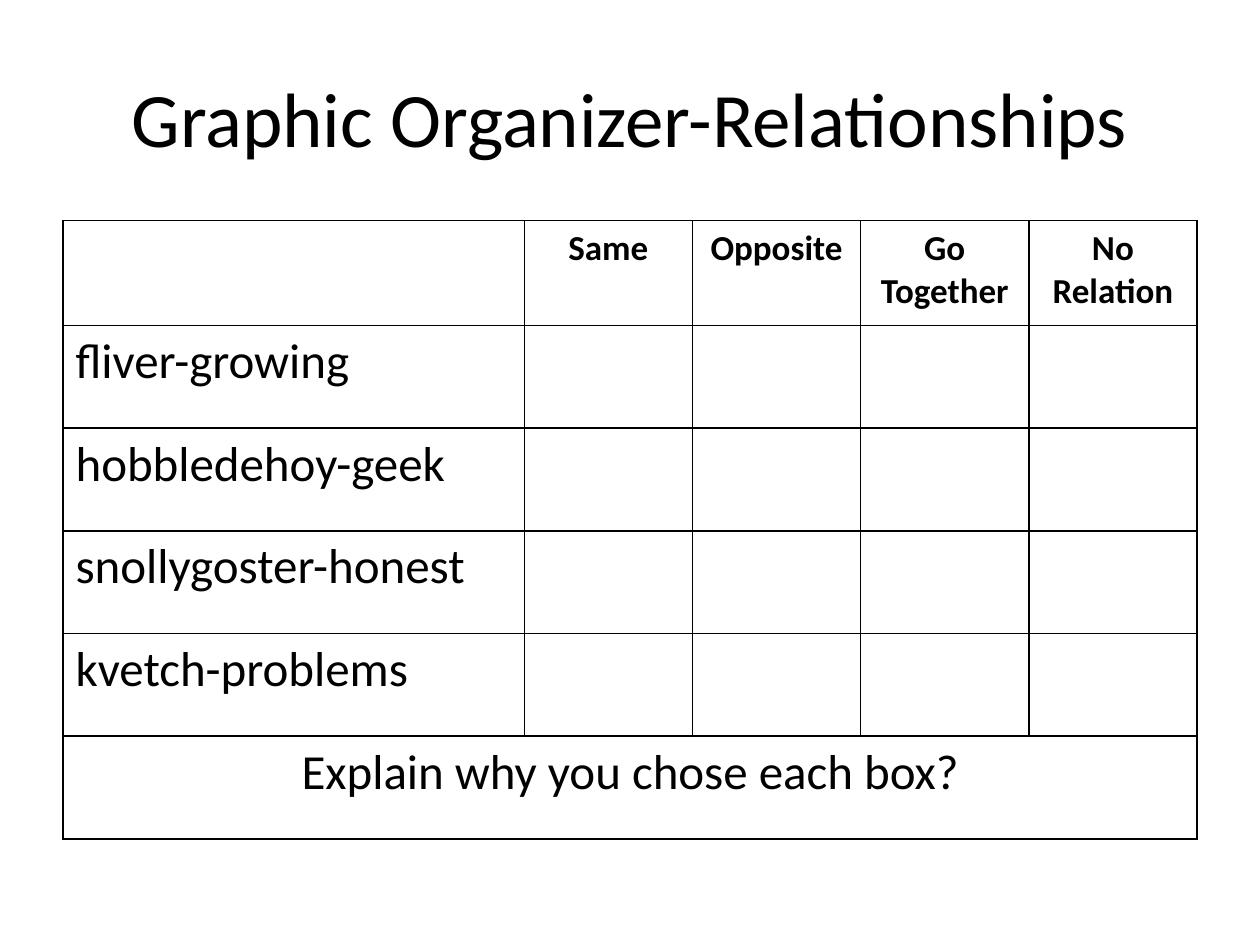
from lxml.etree import SubElement
from pptx import Presentation
from pptx.dml.color import RGBColor
from pptx.enum.text import MSO_ANCHOR, PP_ALIGN
from pptx.oxml.ns import qn
from pptx.util import Cm, Pt

COLORS = {"ink": "000000", "paper": "FFFFFF"}
TITLE = {"size": Pt(44), "bold": False, "name": "Calibri"}
HEAD = {"size": Pt(20), "bold": True, "name": "Calibri"}
BODY = {"size": Pt(28), "bold": False, "name": "Calibri"}

HEADS = ["Same", "Opposite", "Go Together", "No Relation"]
PAIRS = ["fliver-growing", "hobbledehoy-geek", "snollygoster-honest", "kvetch-problems"]
PROMPT = "Explain why you chose each box?"

LEFT, WIDTH = Cm(1.27), Cm(22.86)
COLS = [Cm(9.3)] + [Cm(3.39)] * len(HEADS)
ROWS = [Cm(2.11)] + [Cm(2.07)] * (len(PAIRS) + 1)


def write(frame, text, style, align=PP_ALIGN.CENTER):
    para = frame.paragraphs[0]
    para.alignment = align
    run = para.add_run()
    run.text = text
    for key, value in style.items():
        setattr(run.font, key, value)
    run.font.color.rgb = RGBColor.from_string(COLORS["ink"])


def add_title(slide, text):
    frame = slide.shapes.add_textbox(LEFT, Cm(0.76), WIDTH, Cm(3.18)).text_frame
    for key, value in {"word_wrap": True, "vertical_anchor": MSO_ANCHOR.MIDDLE}.items():
        setattr(frame, key, value)
    write(frame, text, TITLE)


def dress(cell):
    """Give a cell thin borders on all sides and a plain fill."""
    props = cell._tc.get_or_add_tcPr()
    for side in ("lnL", "lnR", "lnT", "lnB"):
        line = SubElement(props, qn(f"a:{side}"), w=str(Pt(1)))
        fill = SubElement(line, qn("a:solidFill"))
        SubElement(fill, qn("a:srgbClr"), val=COLORS["ink"])
    cell.fill.solid()
    cell.fill.fore_color.rgb = RGBColor.from_string(COLORS["paper"])


def add_grid(slide):
    frame = slide.shapes.add_table(
        len(ROWS), len(COLS), LEFT, Cm(4.45), sum(COLS), sum(ROWS))
    table = frame.table
    for key in ("first_row", "horz_banding"):
        setattr(table, key, False)
    for col, width in zip(table.columns, COLS):
        col.width = width
    for row, height in zip(table.rows, ROWS):
        row.height = height
    for cell in table.iter_cells():
        dress(cell)
    return table


def main():
    deck = Presentation()
    deck.slide_width, deck.slide_height = Cm(25.4), Cm(19.05)
    slide = deck.slides.add_slide(deck.slide_layouts[6])

    # Title
    add_title(slide, "Graphic Organizer-Relationships")

    # Heads and word pairs
    table = add_grid(slide)
    for col, text in enumerate(HEADS, 1):
        write(table.cell(0, col).text_frame, text, HEAD)
    for row, text in enumerate(PAIRS, 1):
        write(table.cell(row, 0).text_frame, text, BODY, PP_ALIGN.LEFT)

    # Prompt across the last row
    last = len(ROWS) - 1
    prompt = table.cell(last, 0)
    prompt.merge(table.cell(last, len(COLS) - 1))
    write(prompt.text_frame, PROMPT, BODY)

    deck.save("out.pptx")


if __name__ == "__main__":
    main()
